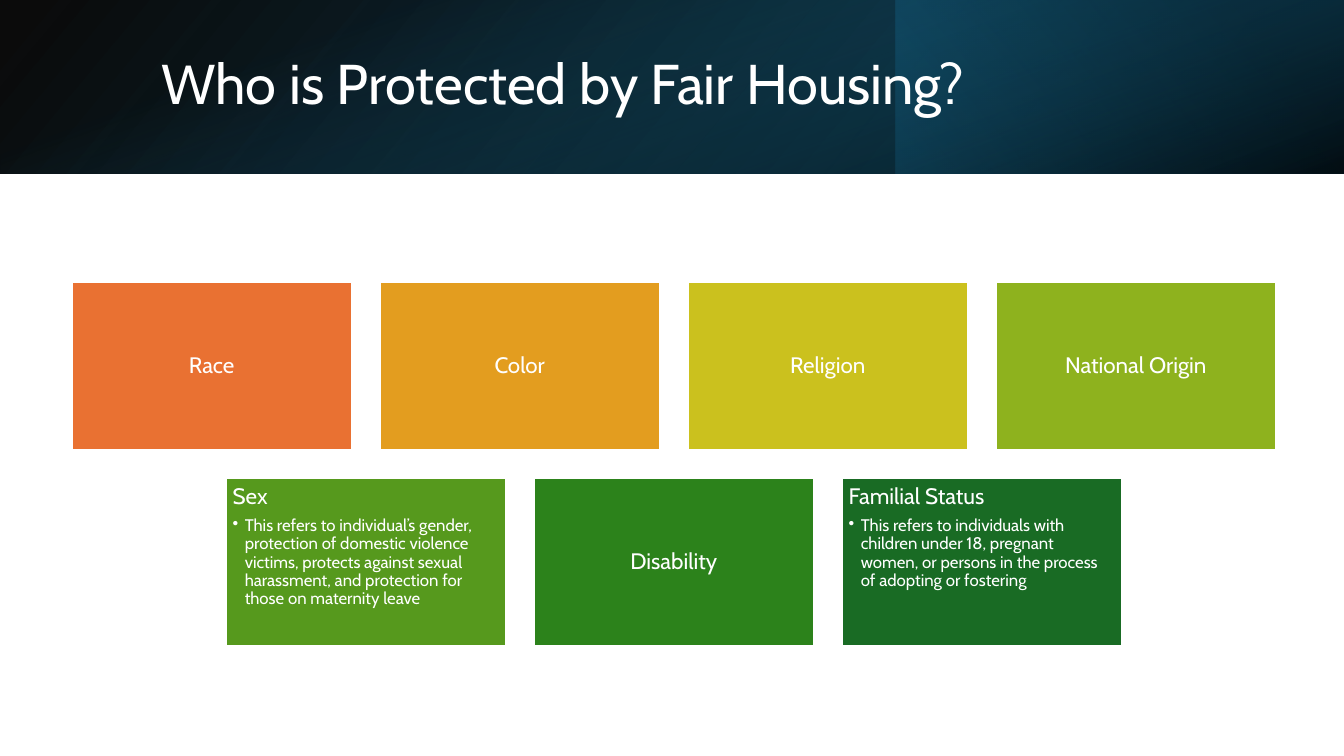
from lxml import etree
from pptx import Presentation
from pptx.dml.color import RGBColor
from pptx.enum.shapes import MSO_SHAPE
from pptx.enum.text import MSO_ANCHOR, PP_ALIGN
from pptx.oxml.ns import qn
from pptx.util import Inches, Pt

COLORS = {
    "white": "FFFFFF", "black": "000000", "blue": "156082",
    "mid_blue": "104862", "dark_blue": "0B3041",
    "orange": "E97132", "amber": "E39D1F", "yellow": "CBC11E", "lime": "8EB21E",
    "leaf": "56991D", "green": "2C821B", "forest": "196B24",
}
SLIDE_W, BANNER_H = 13.33, 1.72


def rgb(name):
    return RGBColor.from_string(COLORS[name])


def add_text(tf, text, size=16, align=PP_ALIGN.LEFT, after=0, bullet=False):
    p = tf.paragraphs[0] if not tf.text else tf.add_paragraph()
    p.alignment, p.line_spacing, p.space_after = align, 0.9, Pt(after)
    if bullet:
        pPr = p._p.get_or_add_pPr()
        pPr.set("marL", str(Inches(0.12)))
        pPr.set("indent", str(-Inches(0.12)))
        etree.SubElement(pPr, qn("a:buChar")).set("char", "•")
    r = p.add_run()
    r.text = text
    r.font.name, r.font.size = "Cabin", Pt(size)
    r.font.color.rgb = rgb("white")


prs = Presentation()
prs.slide_width, prs.slide_height = Inches(SLIDE_W), Inches(7.5)
s = prs.slides.add_slide(prs.slide_layouts[6])

# Banner: three gradient layers (box, rotation, flip, clockwise angle, stops)
mid_x, mid_y = (SLIDE_W - BANNER_H) / 2, (BANNER_H - SLIDE_W) / 2
layers = [
    ((0, 0, SLIDE_W, BANNER_H), 0, True, 140,
     [(0, "black", 96), (100, "mid_blue", 100)]),
    ((SLIDE_W * 2 / 3, 0, SLIDE_W / 3, BANNER_H), 180, False, 320,
     [(19, "dark_blue", 68), (100, "blue", 79)]),
    ((mid_x, mid_y, BANNER_H, SLIDE_W), 90, False, 340,
     [(23, "blue", 0), (99, "black", 74)]),
]
for box, rotation, flip, angle, stops in layers:
    sp = s.shapes.add_shape(MSO_SHAPE.RECTANGLE, *[Inches(v) for v in box])
    sp.shadow.inherit = False
    sp.line.fill.background()
    sp.rotation = rotation
    if flip:
        sp._element.spPr.find(qn("a:xfrm")).set("flipH", "1")
    sp.fill.gradient()
    sp.fill.gradient_angle = 360 - angle
    for stop, (position, color, _) in zip(sp.fill.gradient_stops, stops):
        stop.position, stop.color.rgb = position / 100, rgb(color)
    for clr, (_, _, opacity) in zip(sp._element.spPr.iter(qn("a:srgbClr")), stops):
        etree.SubElement(clr, qn("a:alpha")).set("val", str(opacity * 1000))

# Title
tf = s.shapes.add_textbox(Inches(1.5), Inches(0.38), Inches(10.98), Inches(0.96)).text_frame
tf.word_wrap, tf.vertical_anchor = True, MSO_ANCHOR.MIDDLE
add_text(tf, "Who is Protected by Fair Housing?", size=40)

# Protected classes: four cards above three, the lower row centred
rows = [
    [("Race", "orange", None), ("Color", "amber", None),
     ("Religion", "yellow", None), ("National Origin", "lime", None)],
    [("Sex", "leaf",
      "This refers to individual’s gender, protection of domestic violence victims, "
      "protects against sexual harassment, and protection for those on maternity leave"),
     ("Disability", "green", None),
     ("Familial Status", "forest",
      "This refers to individuals with children under 18, pregnant women, "
      "or persons in the process of adopting or fostering")],
]
CARD_W, CARD_H, GAP = 2.78, 1.67, 0.275
for row, cards in enumerate(rows):
    left = 0.71 + (4 - len(cards)) * (CARD_W + GAP) / 2
    for col, (name, color, detail) in enumerate(cards):
        sp = s.shapes.add_shape(
            MSO_SHAPE.RECTANGLE, Inches(left + col * (CARD_W + GAP)),
            Inches(2.8 + row * (CARD_H + GAP)), Inches(CARD_W), Inches(CARD_H))
        sp.shadow.inherit = False
        sp.fill.solid()
        sp.fill.fore_color.rgb = rgb(color)
        sp.line.color.rgb, sp.line.width = rgb("white"), Pt(1.5)
        tf = sp.text_frame
        tf.word_wrap = True
        tf.margin_left = tf.margin_right = tf.margin_top = tf.margin_bottom = Inches(0.07)
        if detail:
            tf.vertical_anchor = MSO_ANCHOR.TOP
            add_text(tf, name, after=5.6)
            add_text(tf, detail, size=12, bullet=True)
        else:
            tf.vertical_anchor = MSO_ANCHOR.MIDDLE
            add_text(tf, name, align=PP_ALIGN.CENTER)

prs.save("out.pptx")
